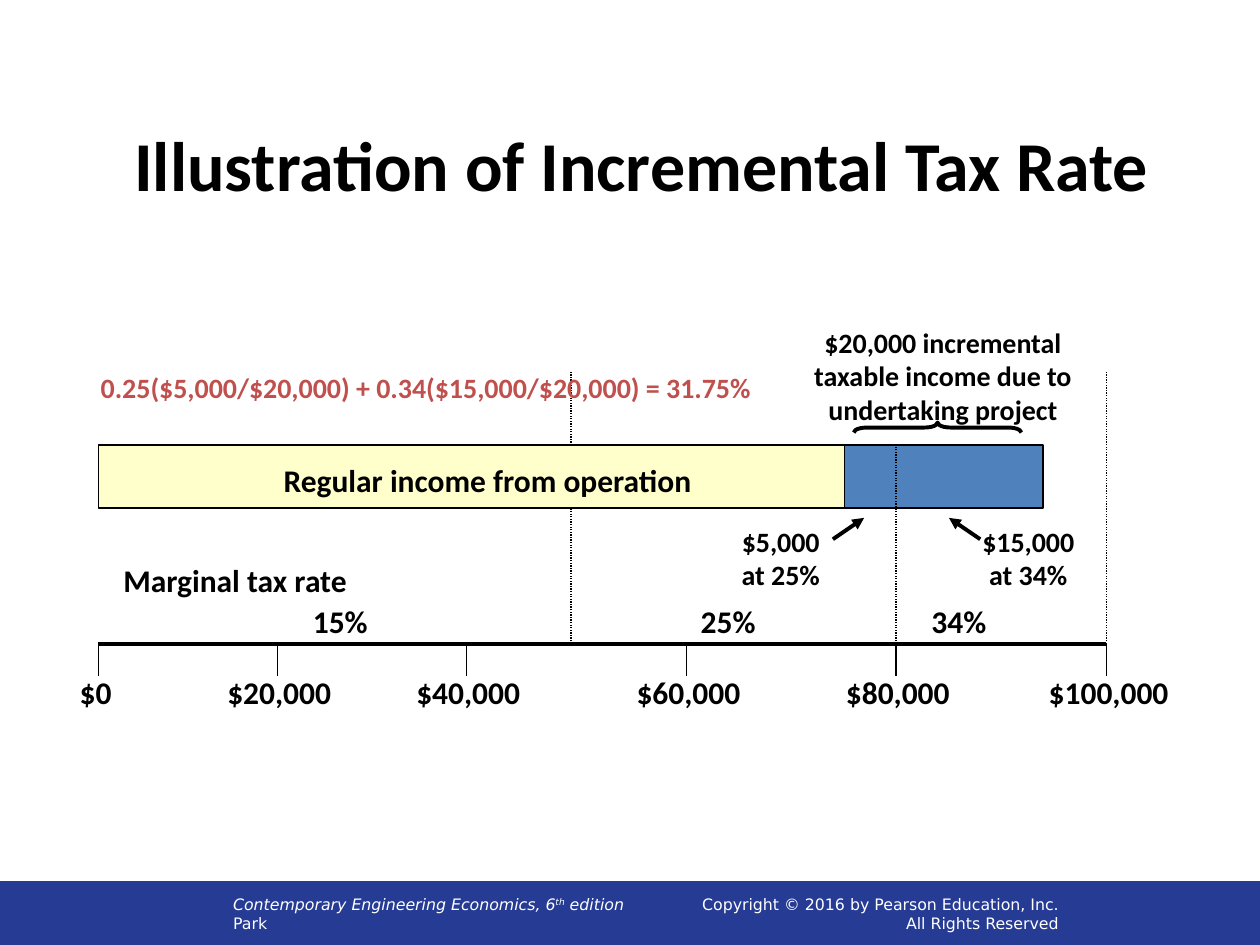
from collections import namedtuple

from lxml.etree import SubElement
from pptx import Presentation
from pptx.dml.color import RGBColor
from pptx.enum.dml import MSO_LINE
from pptx.enum.shapes import MSO_CONNECTOR, MSO_SHAPE
from pptx.enum.text import MSO_ANCHOR, PP_ALIGN
from pptx.oxml.ns import qn
from pptx.util import Cm, Pt

COLORS = {
    "black": "000000",
    "white": "FFFFFF",
    "footer": "263B94",
    "regular": "FFFFCC",
    "increment": "4F81BD",
    "formula": "C0504D",
}
Box = namedtuple("Box", "left top width height")  # centimetres
Tick = namedtuple("Tick", "offset label_center label_width")
TICKS = {
    "$0": Tick(0, -0.05, 1.17),
    "$20,000": Tick(3.61, 3.65, 2.62),
    "$40,000": Tick(7.42, 7.46, 2.62),
    "$60,000": Tick(11.86, 11.9, 2.62),
    "$80,000": Tick(16.08, 16.12, 2.62),
    "$100,000": Tick(20.32, 20.37, 2.95),
}
RATES = {"15%": 4.88, "25%": 12.7, "34%": 17.35}


def color(name):
    return RGBColor.from_string(COLORS[name])


def add_text(slide, box, text, size, color_name="black", align=PP_ALIGN.CENTER,
             font="Calibri", bold=True, anchor=MSO_ANCHOR.TOP, wrap=False):
    shape = slide.shapes.add_textbox(*map(Cm, box))
    text_frame = shape.text_frame
    text_frame.word_wrap = wrap
    text_frame.vertical_anchor = anchor
    text_frame.text = text
    for paragraph in text_frame.paragraphs:
        paragraph.alignment = align
        for run in paragraph.runs:
            run.font.name = font
            run.font.size = Pt(size)
            run.font.bold = bold
            run.font.color.rgb = color(color_name)
    return text_frame


def add_label(slide, center, top, width, text, size=18, height=1.02):
    """Place text centred on a horizontal position."""
    add_text(slide, Box(center - width / 2, top, width, height), text, size)


def add_block(slide, box, fill, line="black"):
    shape = slide.shapes.add_shape(MSO_SHAPE.RECTANGLE, *map(Cm, box))
    shape.shadow.inherit = False
    shape.fill.solid()
    shape.fill.fore_color.rgb = color(fill)
    shape.line.color.rgb = color(line)
    shape.line.width = Pt(0.75)


def add_line(slide, start, end, width=0.75, dotted=False, arrow=False):
    connector = slide.shapes.add_connector(
        MSO_CONNECTOR.STRAIGHT, *map(Cm, (*start, *end)))
    connector.line.color.rgb = color("black")
    connector.line.width = Pt(width)
    if dotted:
        connector.line.dash_style = MSO_LINE.ROUND_DOT
    properties = connector._element.spPr
    if arrow:
        SubElement(properties.find(qn("a:ln")), qn("a:tailEnd"), type="triangle")
    SubElement(properties, qn("a:effectLst"))


def add_title(slide, box):
    add_text(slide, box, "Illustration of Incremental Tax Rate", 40,
             anchor=MSO_ANCHOR.MIDDLE, wrap=True)


def add_bracket_limit(slide, axis, offset, height):
    """Draw a dotted line up from the axis where a tax bracket ends."""
    x = axis.left + offset
    add_line(slide, (x, axis.top), (x, axis.top - height), dotted=True)


def add_axis(slide, box):
    add_line(slide, (box.left, box.top), (box.left + box.width, box.top), 2.25)
    for text, tick in TICKS.items():
        x = box.left + tick.offset
        add_line(slide, (x, box.top), (x, box.top + box.height))
        add_label(slide, box.left + tick.label_center, box.top + 0.46,
                  tick.label_width, text)
    add_label(slide, box.left + 2.76, box.top - 1.8, 5.05, "Marginal tax rate")
    for text, offset in RATES.items():
        add_label(slide, box.left + offset, box.top - 0.97, 1.68, text)


def add_income_bar(slide, box, regular_width):
    left, top, width, height = box
    add_block(slide, Box(left, top, regular_width, height), "regular")
    add_block(slide, Box(left + regular_width, top, width - regular_width, height),
              "increment")
    add_label(slide, left + 7.85, top + 0.2, 8.79, "Regular income from operation")
    add_text(slide, Box(left - 0.2, top - 1.63, 13.69, 1.63),
             "0.25($5,000/$20,000) + 0.34($15,000/$20,000) = 31.75%",
             16, "formula", PP_ALIGN.LEFT)


def add_increment_notes(slide, bar):
    """Put the brace above the bar, and the two arrows and notes below it."""
    left, top = bar.left, bar.top
    brace = slide.shapes.add_shape(
        MSO_SHAPE.LEFT_BRACE, Cm(left + 16.82), Cm(top - 2.04), Cm(0.2), Cm(3.38))
    brace.rotation = 90
    brace.adjustments[0] = 1.33
    brace.shadow.inherit = False
    brace.fill.background()
    brace.line.color.rgb = color("black")
    brace.line.width = Pt(2.25)
    add_label(slide, left + 17.03, top - 2.54, 5.77,
              "$20,000 incremental\ntaxable income due to\nundertaking project",
              16, 2.31)
    notes = [
        ("$5,000\nat 25%", 13.76, 2.11, 14.81, 15.44),
        ("$15,000\nat 34%", 18.75, 2.39, 17.78, 17.15),
    ]
    for text, center, width, start, end in notes:
        add_line(slide, (left + start, top + 1.9), (left + end, top + 1.47),
                 2.25, arrow=True)
        add_label(slide, left + center, top + 1.47, width, text, 16, 1.63)


def add_footer(slide, box):
    add_block(slide, box, "footer", "footer")
    style = dict(size=9, color_name="white", font="DejaVu Sans", bold=False,
                 anchor=MSO_ANCHOR.MIDDLE, wrap=True)
    book = add_text(slide, Box(box.left + 4.45, box.top, 15.65, box.height),
                    "Contemporary Engineering Economics, 6\nPark",
                    align=PP_ALIGN.LEFT, **style)
    title = book.paragraphs[0]
    for text in ("th", " edition"):
        run = title.add_run()
        run.text = text
        run.font.name = style["font"]
        run.font.size = Pt(style["size"])
        run.font.color.rgb = color("white")
    for run in title.runs:
        run.font.italic = True
    title.runs[1].font._element.set("baseline", "30000")
    add_text(slide, Box(box.left + 12.5, box.top, 9.09, box.height),
             "Copyright © 2016 by Pearson Education, Inc.\nAll Rights Reserved",
             align=PP_ALIGN.RIGHT, **style)


def main():
    presentation = Presentation()
    presentation.slide_width = Cm(25.4)
    presentation.slide_height = Cm(19.05)
    slide = presentation.slides.add_slide(presentation.slide_layouts[6])

    axis = Box(1.98, 12.98, 20.32, 0.64)
    bar = Box(1.98, 8.97, 19.05, 1.27)
    add_footer(slide, Box(0, 17.78, 25.4, 1.27))
    add_title(slide, Box(1.4, 2.59, 23.06, 1.4))
    add_bracket_limit(slide, axis, 9.53, 5.51)
    add_income_bar(slide, bar, 15.04)
    add_axis(slide, axis)
    add_increment_notes(slide, bar)
    add_bracket_limit(slide, axis, TICKS["$80,000"].offset, axis.top - bar.top)
    add_bracket_limit(slide, axis, TICKS["$100,000"].offset, 5.51)

    presentation.save("out.pptx")


if __name__ == "__main__":
    main()
